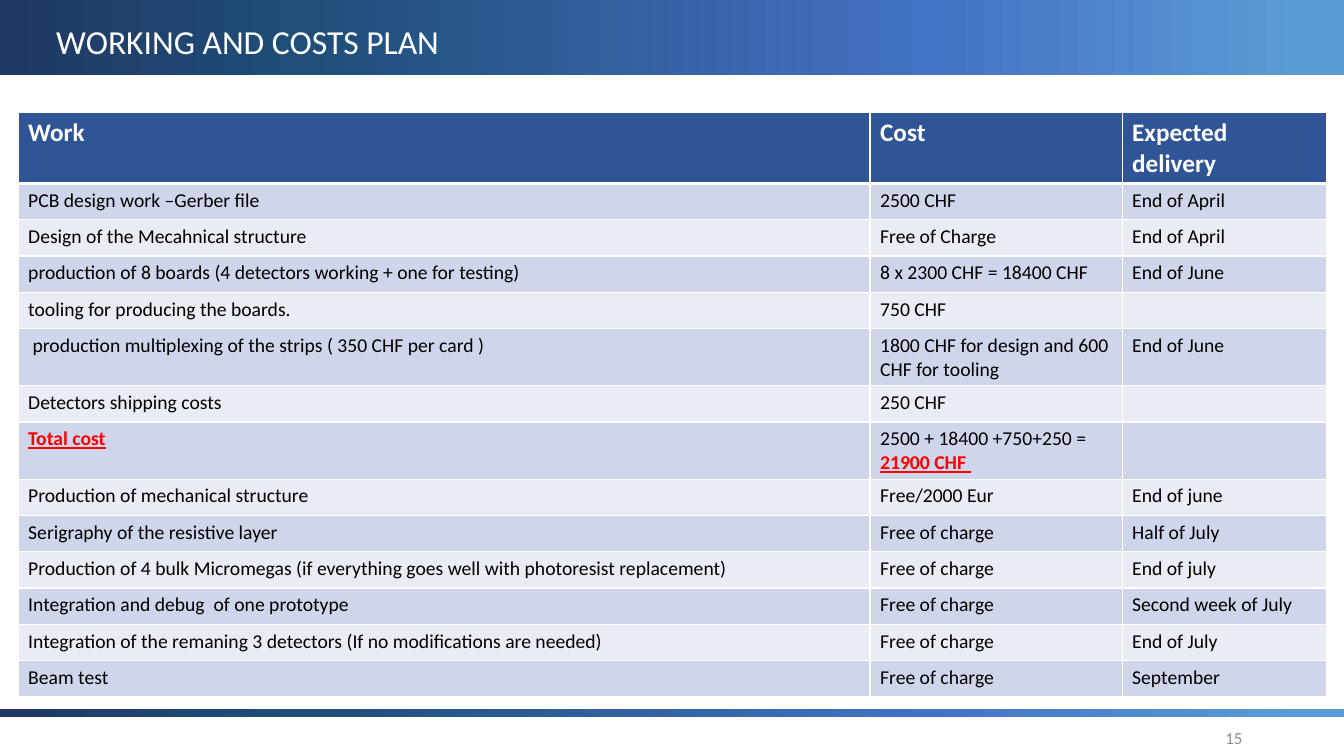
import pptx
import pptx.util
import pptx.dml.color
import pptx.enum.shapes
import pptx.enum.text
import pptx.oxml
import pptx.oxml.ns

Inches, Pt = pptx.util.Inches, pptx.util.Pt
RGB = pptx.dml.color.RGBColor
ALIGN = pptx.enum.text.PP_ALIGN
ANCHOR = pptx.enum.text.MSO_ANCHOR
NS = pptx.oxml.ns.nsdecls("a")

WIDE, HIGH = 13.33, 7.5
FONT = "Calibri"
WHITE = RGB(0xFF, 0xFF, 0xFF)
BLACK = RGB(0x00, 0x00, 0x00)
RED = RGB(0xFF, 0x00, 0x00)
GRAY = RGB(0x8C, 0x8C, 0x8C)
HEAD = RGB(0x2F, 0x55, 0x97)
BANDS = (RGB(0xCF, 0xD5, 0xEA), RGB(0xE9, 0xEB, 0xF5))
FADE = (
    (0, RGB(0x20, 0x38, 0x64)),
    (23, RGB(0x1F, 0x4E, 0x79)),
    (69, RGB(0x44, 0x72, 0xC4)),
    (97, RGB(0x5B, 0x9B, 0xD5)),
)

# Table grid: column widths as shares of the table, one row height
TABLE_WIDE = 12.98
SHARES = (0.651, 0.1926, 0.1564)
ROW = 0.36
FREE = "Free of charge"
TOTAL = ("Total cost", "21900 CHF ")
ROWS = (
    ("Work", "Cost", "Expected delivery"),
    ("PCB design work –Gerber file", "2500 CHF", "End of April"),
    ("Design of the Mecahnical structure", "Free of Charge", "End of April"),
    ("production of 8 boards (4 detectors working + one for testing)",
     "8 x 2300 CHF = 18400 CHF", "End of June"),
    ("tooling for producing the boards.", "750 CHF", ""),
    (" production multiplexing of the strips ( 350 CHF per card )",
     "1800 CHF for design and 600 CHF for tooling", "End of June"),
    ("Detectors shipping costs", "250 CHF", ""),
    (TOTAL[0], "2500 + 18400 +750+250 = ", ""),
    ("Production of mechanical structure", "Free/2000 Eur", "End of june"),
    ("Serigraphy of the resistive layer", FREE, "Half of July"),
    ("Production of 4 bulk Micromegas (if everything goes well with "
     "photoresist replacement)", FREE, "End of july"),
    ("Integration and debug  of one prototype", FREE, "Second week of July"),
    ("Integration of the remaning 3 detectors (If no modifications are needed)",
     FREE, "End of July"),
    ("Beam test", FREE, "September"),
)


def style(run, size, color, bold=False, under=False):
    font = run.font
    font.name, font.size, font.bold = FONT, Pt(size), bold
    font.underline = under
    font.color.rgb = color


def add_bar(slide, top, high):
    bar = slide.shapes.add_shape(
        pptx.enum.shapes.MSO_SHAPE.RECTANGLE,
        0, Inches(top), Inches(WIDE), Inches(high))
    bar.shadow.inherit = False
    bar.line.fill.background()
    # Four-stop fade from left to right
    stops = "".join(
        f'<a:gs pos="{pos * 1000}"><a:srgbClr val="{color}"/></a:gs>'
        for pos, color in FADE)
    grad = pptx.oxml.parse_xml(
        f'<a:gradFill {NS} rotWithShape="1"><a:gsLst>{stops}</a:gsLst>'
        '<a:lin ang="0" scaled="0"/></a:gradFill>')
    bar.element.spPr.find(pptx.oxml.ns.qn("a:prstGeom")).addnext(grad)


def add_text(slide, text, place, size, color, align, anchor):
    box = slide.shapes.add_textbox(*map(Inches, place))
    frame = box.text_frame
    frame.text = text
    frame.word_wrap = True
    frame.vertical_anchor = anchor
    frame.paragraphs[0].alignment = align
    style(frame.paragraphs[0].runs[0], size, color)


def add_rules(cell, base):
    # White borders, with a thicker bottom one under the header
    props = cell._tc.get_or_add_tcPr()
    for side, width in (("L", 1), ("R", 1), ("T", 1), ("B", base)):
        props.append(pptx.oxml.parse_xml(
            f'<a:ln{side} {NS} w="{Pt(width)}"><a:solidFill>'
            f'<a:srgbClr val="{WHITE}"/></a:solidFill></a:ln{side}>'))


def fill_cell(cell, text, row):
    top = row == 0
    add_rules(cell, 3 if top else 1)
    cell.fill.solid()
    cell.fill.fore_color.rgb = HEAD if top else BANDS[(row - 1) % 2]
    cell.text_frame.text = text
    para = cell.text_frame.paragraphs[0]
    if not text:
        para._p.get_or_add_endParaRPr().set("sz", "1400")
    if text.endswith("= "):
        para.add_run().text = TOTAL[1]
    for run in para.runs:
        if top:
            style(run, 18, WHITE, bold=True)
        elif run.text in TOTAL:
            style(run, 14, RED, bold=True, under=True)
        else:
            style(run, 14, BLACK)


def add_plan(slide, left, top):
    table = slide.shapes.add_table(
        len(ROWS), len(SHARES), Inches(left), Inches(top),
        Inches(TABLE_WIDE), Inches(ROW * len(ROWS))).table
    for col, share in zip(table.columns, SHARES):
        col.width = Inches(TABLE_WIDE * share)
    for row, texts in enumerate(ROWS):
        table.rows[row].height = Inches(ROW)
        for col, text in enumerate(texts):
            fill_cell(table.cell(row, col), text, row)


def main():
    deck = pptx.Presentation()
    deck.slide_width, deck.slide_height = Inches(WIDE), Inches(HIGH)
    slide = deck.slides.add_slide(deck.slide_layouts[6])

    # Header and footer bars
    add_bar(slide, 0, 0.74)
    add_bar(slide, 7.03, 0.08)

    # Page number, cost table and title
    add_text(slide, "15", (9.42, 7.12, 3, 0.4), 12, GRAY,
             ALIGN.RIGHT, ANCHOR.MIDDLE)
    add_plan(slide, 0.18, 1.12)
    add_text(slide, "WORKING AND COSTS PLAN", (0.46, 0.16, 5.47, 0.5), 24,
             WHITE, ALIGN.LEFT, ANCHOR.TOP)

    deck.save("out.pptx")


if __name__ == "__main__":
    main()
